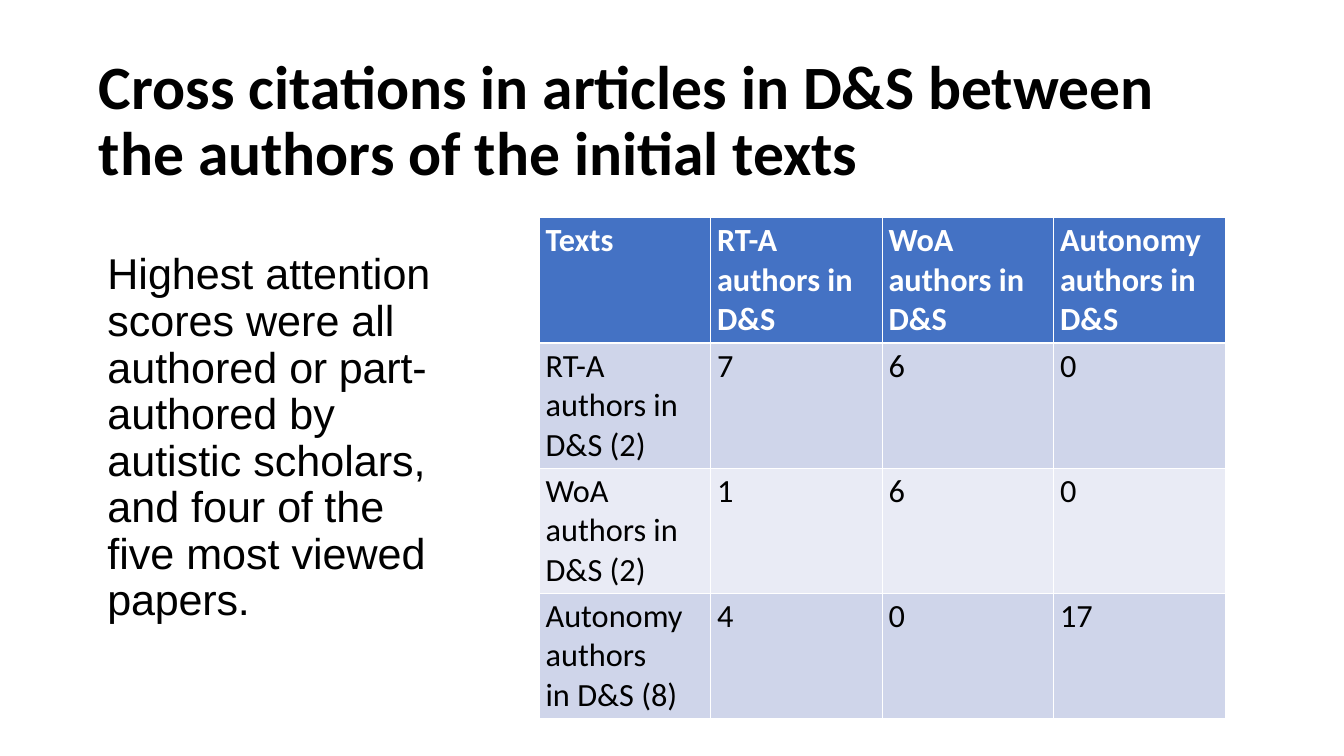
from dataclasses import dataclass

from lxml import etree
from pptx import Presentation
from pptx.dml.color import RGBColor
from pptx.enum.text import MSO_ANCHOR, MSO_AUTO_SIZE, PP_ALIGN
from pptx.oxml.ns import qn
from pptx.util import Pt

LEFT = PP_ALIGN.LEFT
TOP, MIDDLE = MSO_ANCHOR.TOP, MSO_ANCHOR.MIDDLE
NO_FIT = MSO_AUTO_SIZE.NONE
TITLE_ONLY = 5


@dataclass(frozen=True)
class Theme:
    """Colours, fonts and type sizes of the slide."""
    black: str = "000000"
    white: str = "FFFFFF"
    head: str = "4472C4"
    bands: tuple = ("CFD5EA", "E9EBF5")
    sans: str = "Calibri"
    plain: str = "Arial"
    title: float = 68.6
    body: float = 48
    cell: float = 36


THEME = Theme()

TITLE = "Cross citations in articles in D&S between the authors of the initial texts"
BODY = [
    ("Highest attention scores were all authored ", 0),
    ("or ", -50),
    ("part-", -20),
    ("authored by autistic scholars, and four ", 0),
    ("of ", -50),
    ("the five most viewed ", 0),
    ("papers.", -20),
]
ROWS = [
    ["Texts", "RT-A authors in D&S", "WoA authors in D&S", "Autonomy authors in D&S"],
    ["RT-A authors in\nD&S (2)", "7", "6", "0"],
    ["WoA authors in\nD&S (2)", "1", "6", "0"],
    ["Autonomy authors\nin D&S (8)", "4", "0", "17"],
]


def add_run(para, text, size, font, color, bold=False, track=0):
    """Add one formatted run, with tracking in hundredths of a point."""
    run = para.add_run()
    run.text = text
    run.font.size = Pt(size)
    run.font.name = font
    run.font.bold = bold
    run.font.color.rgb = RGBColor.from_string(color)
    if track:
        run.font._element.set("spc", str(track))


def set_frame(frame, anchor):
    """Prepare a text frame and return its first paragraph."""
    frame.word_wrap = True
    frame.auto_size = NO_FIT
    frame.vertical_anchor = anchor
    para = frame.paragraphs[0]
    para.alignment = LEFT
    para.line_spacing = 0.9
    return para


def add_title(slide):
    """Place and fill the title."""
    title = slide.shapes.title
    title.left, title.top, title.width, title.height = Pt(103), Pt(55), Pt(1291), Pt(163)
    para = set_frame(title.text_frame, MIDDLE)
    add_run(para, TITLE, THEME.title, THEME.sans, THEME.black, bold=True)


def add_body(slide):
    """Add the paragraph on the left."""
    box = slide.shapes.add_textbox(Pt(112.5), Pt(278), Pt(402), Pt(477))
    para = set_frame(box.text_frame, TOP)
    para.space_before = Pt(15.6)
    for text, track in BODY:
        add_run(para, text, THEME.body, THEME.plain, THEME.black, track=track)


def add_edge(cell, side, width):
    """Draw one white cell border."""
    edge = etree.SubElement(cell._tc.get_or_add_tcPr(), qn(f"a:ln{side}"), w=str(Pt(width)))
    fill = etree.SubElement(edge, qn("a:solidFill"))
    etree.SubElement(fill, qn("a:srgbClr"), val=THEME.white)


def fill_cell(cell, text, row):
    """Write and style one cell according to its row."""
    head = row == 0
    for side in "LRTB":
        thick = (row, side) in ((0, "B"), (1, "T"))
        add_edge(cell, side, 3 if thick else 1)
    cell.fill.solid()
    color = THEME.head if head else THEME.bands[(row - 1) % 2]
    cell.fill.fore_color.rgb = RGBColor.from_string(color)
    frame = cell.text_frame
    for i, line in enumerate(text.split("\n")):
        para = frame.add_paragraph() if i else frame.paragraphs[0]
        ink = THEME.white if head else THEME.black
        add_run(para, line, THEME.cell, THEME.sans, ink, bold=head)


def add_grid(slide):
    """Add the table of citation counts."""
    count = len(ROWS)
    frame = slide.shapes.add_table(count, len(ROWS[0]), Pt(600.5), Pt(242.6), Pt(764), Pt(547))
    for r, row in enumerate(ROWS):
        for c, text in enumerate(row):
            fill_cell(frame.table.cell(r, c), text, r)


def main():
    """Build and save the slide."""
    deck = Presentation()
    deck.slide_width, deck.slide_height = Pt(1497), Pt(842)
    slide = deck.slides.add_slide(deck.slide_layouts[TITLE_ONLY])
    add_title(slide)
    add_body(slide)
    add_grid(slide)
    deck.save("out.pptx")


if __name__ == "__main__":
    main()
